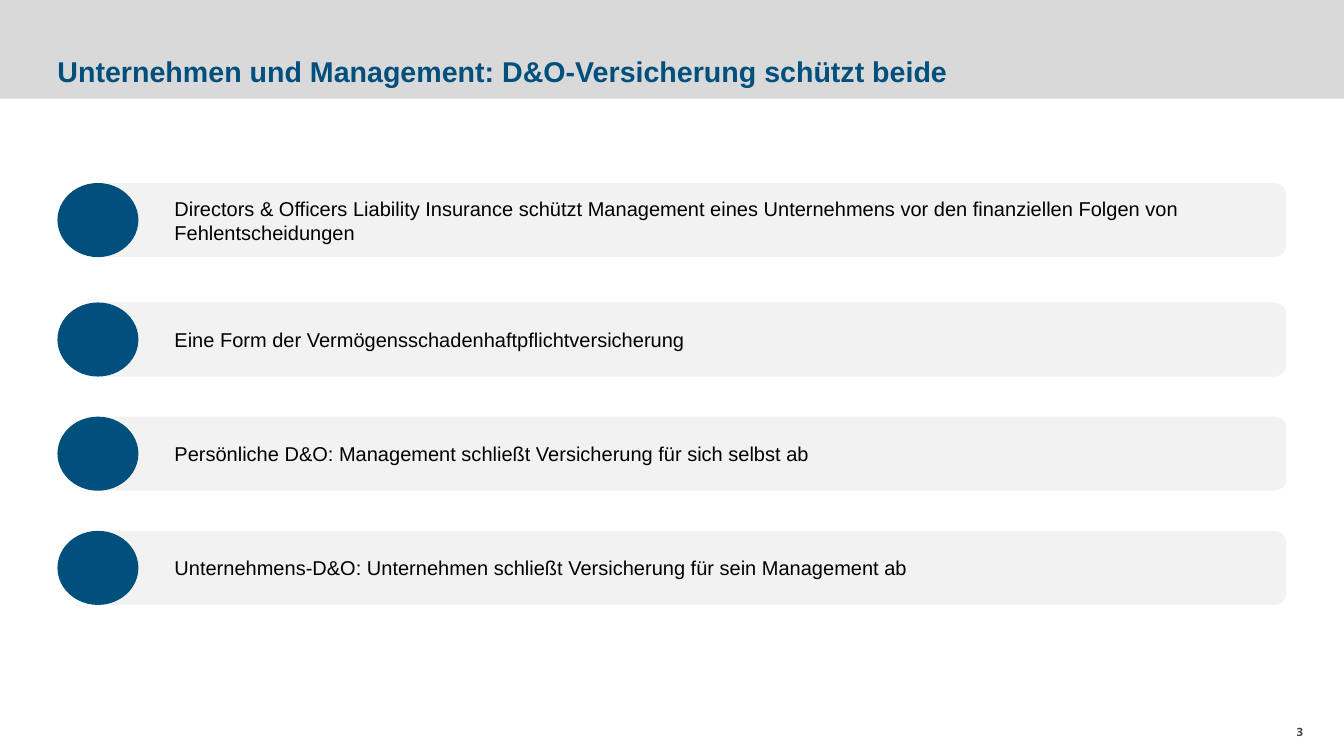
from pptx import Presentation
from pptx.dml.color import RGBColor
from pptx.enum.shapes import MSO_SHAPE
from pptx.enum.text import MSO_ANCHOR, PP_ALIGN
from pptx.util import Cm, Pt

RECTANGLE = MSO_SHAPE.RECTANGLE
ROUNDED = MSO_SHAPE.ROUNDED_RECTANGLE
OVAL = MSO_SHAPE.OVAL
MIDDLE = MSO_ANCHOR.MIDDLE
BOTTOM = MSO_ANCHOR.BOTTOM
LEFT = PP_ALIGN.LEFT

TITLE_ONLY = 5
BLUE = "004F7C"
BAR_HEIGHT = 1.83


def add_filled(kind, left, top, width, height, color):
    shape = slide.shapes.add_shape(kind, Cm(left), Cm(top), Cm(width), Cm(height))
    shape.shadow.inherit = False
    shape.fill.solid()
    shape.fill.fore_color.rgb = RGBColor.from_string(color)
    shape.line.fill.background()
    return shape


def write_text(shape, text, size, color, font="Arial", bold=False, anchor=MIDDLE,
               wrap=True, margin_x=0, margin_y=0):
    frame = shape.text_frame
    frame.word_wrap = wrap
    frame.vertical_anchor = anchor
    frame.margin_left = frame.margin_right = Cm(margin_x)
    frame.margin_top = frame.margin_bottom = Cm(margin_y)
    paragraph = frame.paragraphs[0]
    paragraph.alignment = LEFT
    run = paragraph.add_run()
    run.text = text
    run.font.name = font
    run.font.size = Pt(size)
    run.font.bold = bold
    run.font.color.rgb = RGBColor.from_string(color)


presentation = Presentation()
presentation.slide_width = Cm(33.2)
presentation.slide_height = Cm(18.67)
slide = presentation.slides.add_slide(presentation.slide_layouts[TITLE_ONLY])

title = slide.shapes.title
title.left, title.top, title.width, title.height = Cm(1.42), Cm(1.19), Cm(26), Cm(1.12)
write_text(title, "Unternehmen und Management: D&O-Versicherung schützt beide",
           20, BLUE, bold=True, anchor=BOTTOM, margin_y=0.13)

band = add_filled(RECTANGLE, 0, 0, 33.2, 2.44, "D9D9D9")
title.element.addprevious(band.element)

statements = [
    (4.52, "Directors & Officers Liability Insurance schützt Management eines Unternehmens "
           "vor den finanziellen Folgen von Fehlentscheidungen"),
    (7.47, "Eine Form der Vermögensschadenhaftpflichtversicherung"),
    (10.29, "Persönliche D&O: Management schließt Versicherung für sich selbst ab"),
    (13.11, "Unternehmens-D&O: Unternehmen schließt Versicherung für sein Management ab"),
]
for top, statement in statements:
    add_filled(ROUNDED, 2.26, top, 29.52, BAR_HEIGHT, "F2F2F2")
    add_filled(OVAL, 1.42, top, 2, BAR_HEIGHT, BLUE)
    statement_box = slide.shapes.add_textbox(Cm(4.06), Cm(top), Cm(27.15), Cm(BAR_HEIGHT))
    write_text(statement_box, statement, 14, "000000", margin_x=0.25, margin_y=0.13)

page_number = slide.shapes.add_textbox(Cm(32.03), Cm(17.91), Cm(0.36), Cm(0.33))
write_text(page_number, "3", 8, "3B454B", font="Open Sans", bold=True, wrap=False)

presentation.save("out.pptx")
